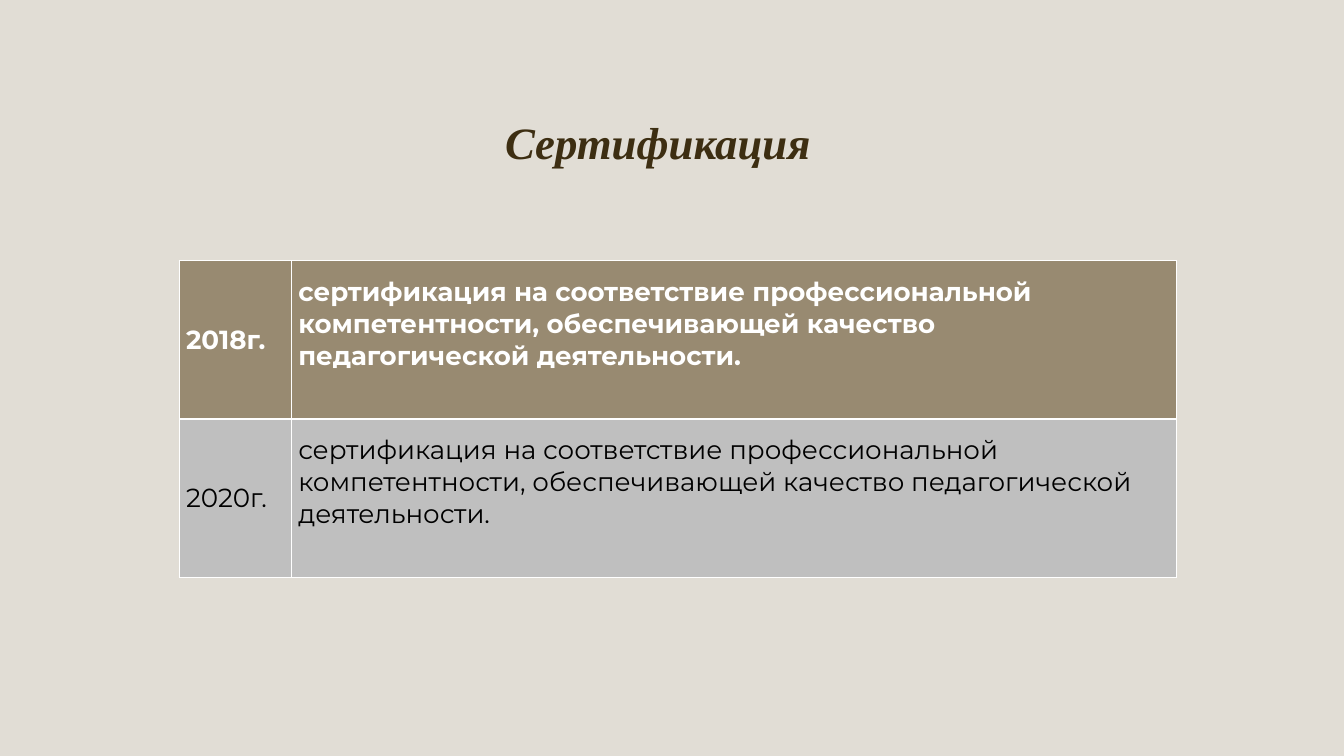
from lxml.etree import SubElement
from pptx import Presentation
from pptx.dml.color import RGBColor
from pptx.enum.text import MSO_ANCHOR, PP_ALIGN
from pptx.oxml import parse_xml
from pptx.oxml.ns import nsdecls
from pptx.util import Cm, Pt

SAND = RGBColor(0xE1, 0xDD, 0xD5)
BROWN = RGBColor(0x3D, 0x2E, 0x12)
KHAKI = RGBColor(0x98, 0x8A, 0x71)
GREY = RGBColor(0xBF, 0xBF, 0xBF)
WHITE = RGBColor(0xFF, 0xFF, 0xFF)
BLACK = RGBColor(0, 0, 0)

DESCRIPTION = ("сертификация на соответствие профессиональной компетентности, "
               "обеспечивающей качество педагогической деятельности.")
CERTIFICATES = [("2018г.", DESCRIPTION), ("2020г.", DESCRIPTION)]


def write_text(frame, text, *, font, size, color, bold=False, italic=False,
               align=PP_ALIGN.LEFT):
    para = frame.paragraphs[0]
    para.alignment = align
    span = para.add_run()
    span.text = text
    span.font.name = font
    span.font.size = Pt(size)
    span.font.bold = bold
    span.font.italic = italic
    span.font.color.rgb = color


def set_borders(cell, color, **widths):
    """Draw cell borders; widths are points keyed by side: L, R, T, B."""
    properties = cell._tc.get_or_add_tcPr()
    for index, (side, width) in enumerate(widths.items()):
        line = parse_xml(
            f'<a:ln{side} {nsdecls("a")} w="{Pt(width)}">'
            f'<a:solidFill><a:srgbClr val="{color}"/></a:solidFill></a:ln{side}>')
        properties.insert(index, line)


def add_title(page, text, left, top, width, height):
    title = page.shapes.title
    title.left, title.top, title.width, title.height = left, top, width, height
    frame = title.text_frame
    frame.margin_left = frame.margin_right = 0
    frame.margin_top = frame.margin_bottom = 0
    frame.vertical_anchor = MSO_ANCHOR.MIDDLE
    write_text(frame, text, font="Times New Roman", size=48, color=BROWN,
               bold=True, italic=True, align=PP_ALIGN.CENTER)


def add_certificates(page, rows, left, top, width, height):
    table = page.shapes.add_table(len(rows), 2, left, top, width, height).table
    year_width = Cm(4.24)
    table.columns[0].width = year_width
    table.columns[1].width = width - year_width
    for row_index, texts in enumerate(rows):
        header = row_index == 0
        for column_index, text in enumerate(texts):
            cell = table.cell(row_index, column_index)
            cell.fill.solid()
            cell.fill.fore_color.rgb = KHAKI if header else GREY
            cell.vertical_anchor = MSO_ANCHOR.MIDDLE
            if column_index == 1:
                cell.margin_bottom = Cm(1.32)
            write_text(cell.text_frame, text, font="Montserrat", size=28,
                       color=WHITE if header else BLACK, bold=header)
            set_borders(cell, WHITE, L=1, R=1, T=1 if header else 3,
                        B=3 if header else 1)


def main():
    deck = Presentation()
    deck.slide_width, deck.slide_height = Cm(50.8), Cm(28.58)
    page = deck.slides.add_slide(deck.slide_layouts[5])
    page.background.fill.solid()
    page.background.fill.fore_color.rgb = SAND
    add_title(page, "Сертификация", Cm(3.81), Cm(4.34), Cm(42.11), Cm(2.06))
    add_certificates(page, CERTIFICATES, Cm(6.78), Cm(9.86), Cm(37.67), Cm(11.96))
    deck.save("out.pptx")


if __name__ == "__main__":
    main()
